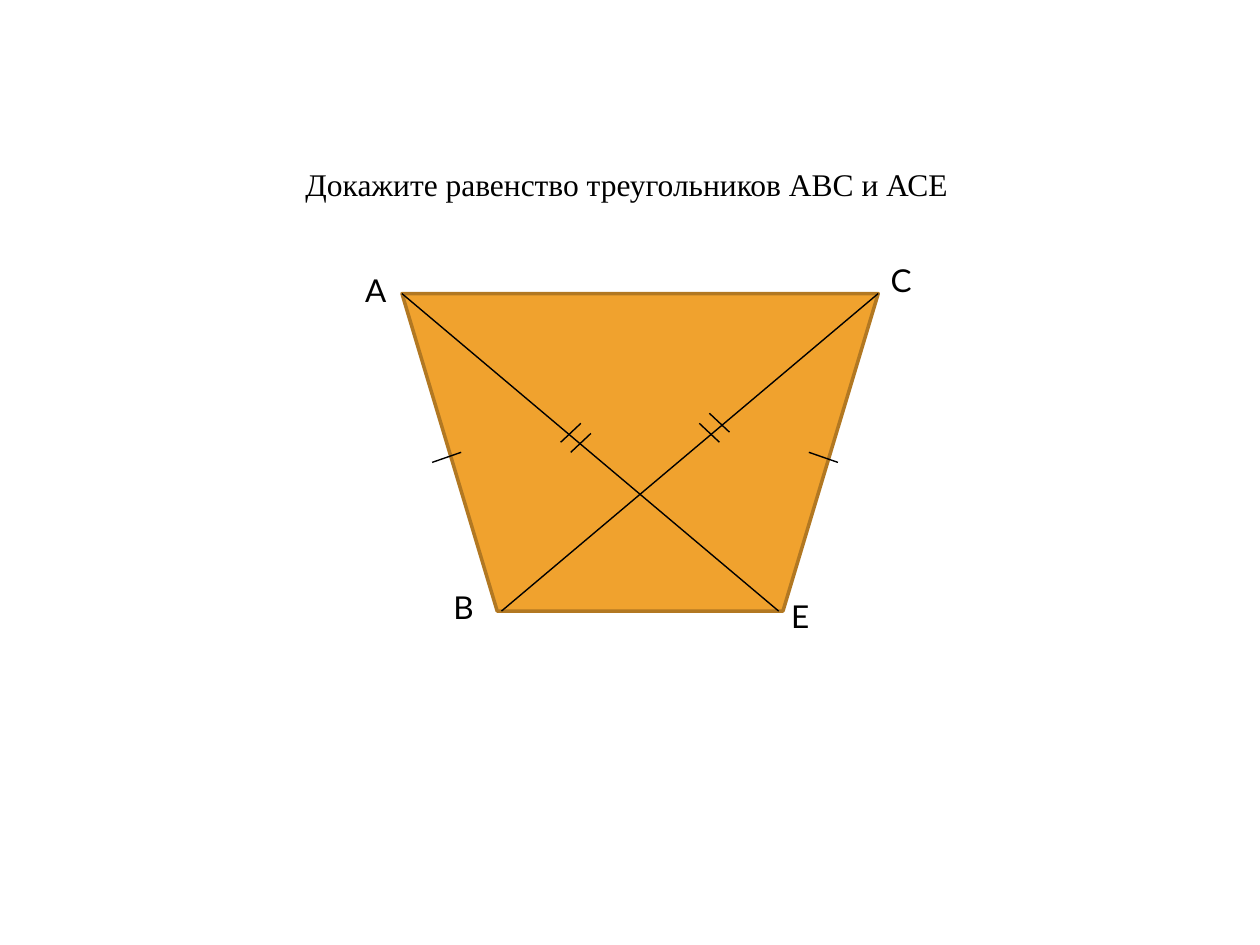
from dataclasses import dataclass

from lxml import etree
from pptx import Presentation
from pptx import util as u
from pptx.dml.color import RGBColor
from pptx.enum import shapes, text
from pptx.oxml import ns


@dataclass(frozen=True)
class Theme:
    """Colours, fonts and sizes of the slide."""
    fill: str = "F0A22E"
    edge: str = "B27822"
    ink: str = "000000"
    title_font: str = "Times New Roman"
    label_font: str = "Lato"
    size: float = 18
    edge_width: float = 2
    line_width: float = 0.79


THEME = Theme()


def px(n):
    """Turn px, 100 to the inch, into EMU."""
    return u.Emu(n * 9144)


def add_run(p, words, font):
    """Add a run in the ink colour."""
    r = p.add_run()
    r.text = words
    r.font.name = font
    r.font.size = u.Pt(THEME.size)
    r.font.color.rgb = RGBColor.from_string(THEME.ink)


def add_line(s, x, y, start, end):
    """Draw a thin line between two points relative to x, y."""
    line = s.shapes.add_connector(
        shapes.MSO_CONNECTOR.STRAIGHT,
        px(x + start[0]), px(y + start[1]), px(x + end[0]), px(y + end[1]))
    line.line.color.rgb = RGBColor.from_string(THEME.ink)
    line.line.width = u.Pt(THEME.line_width)
    etree.SubElement(line._element.spPr, ns.qn("a:effectLst"))


def add_label(s, x, y, w, h, letter):
    """Name a vertex."""
    sp = s.shapes.add_textbox(px(x), px(y), px(w), px(h))
    tf = sp.text_frame
    tf.word_wrap = False
    tf.auto_size = text.MSO_AUTO_SIZE.SHAPE_TO_FIT_TEXT
    add_run(tf.paragraphs[0], letter, THEME.label_font)


def add_title(s, x, y, w, h):
    """Place the task in the title placeholder."""
    sp = s.shapes.title
    sp.left, sp.top, sp.width, sp.height = map(px, (x, y, w, h))
    tf = sp.text_frame
    tf.word_wrap = True
    tf.auto_size = text.MSO_AUTO_SIZE.SHAPE_TO_FIT_TEXT
    tf.vertical_anchor = text.MSO_ANCHOR.MIDDLE
    tf.margin_right = px(35)
    p = tf.paragraphs[0]
    p.alignment = text.PP_ALIGN.CENTER
    add_run(p, "Докажите равенство треугольников АВС и АСЕ", THEME.title_font)


def add_trapezoid(s, x, y, w, h):
    """Draw the trapezoid with its diagonals, vertex names and equality marks."""
    sp = s.shapes.add_shape(shapes.MSO_SHAPE.FLOWCHART_MANUAL_OPERATION,
                            px(x), px(y), px(w), px(h))
    sp.shadow.inherit = False
    sp.fill.solid()
    sp.fill.fore_color.rgb = RGBColor.from_string(THEME.fill)
    sp.line.color.rgb = RGBColor.from_string(THEME.edge)
    sp.line.width = u.Pt(THEME.edge_width)

    inset = 79
    add_line(s, x, y, (w, 0), (inset, h))
    add_line(s, x, y, (0, 0), (w - inset, h))

    for letter, dx, dy, width in (("А", -39, -23, 34), ("В", 31, h - 23, 35),
                                  ("Е", w - inset, h - 16, 34), ("С", w, -31, 35)):
        add_label(s, x + dx, y + dy, width, 40, letter)

    add_line(s, x, y, (24, 134), (47, 126))
    add_line(s, x, y, (323, 126), (346, 134))
    for step in (0, 8):
        add_line(s, x + step, y + step, (126, 118), (142, 103))
        add_line(s, x + step, y - step, (236, 103), (252, 118))


def main():
    """Build and save the slide."""
    prs = Presentation()
    prs.slide_width, prs.slide_height = px(1000), px(750)
    s = prs.slides.add_slide(prs.slide_layouts[5])
    add_trapezoid(s, 319, 233, 378, 252)
    add_title(s, 83, 126, 854, 40)
    prs.save("out.pptx")


if __name__ == "__main__":
    main()
